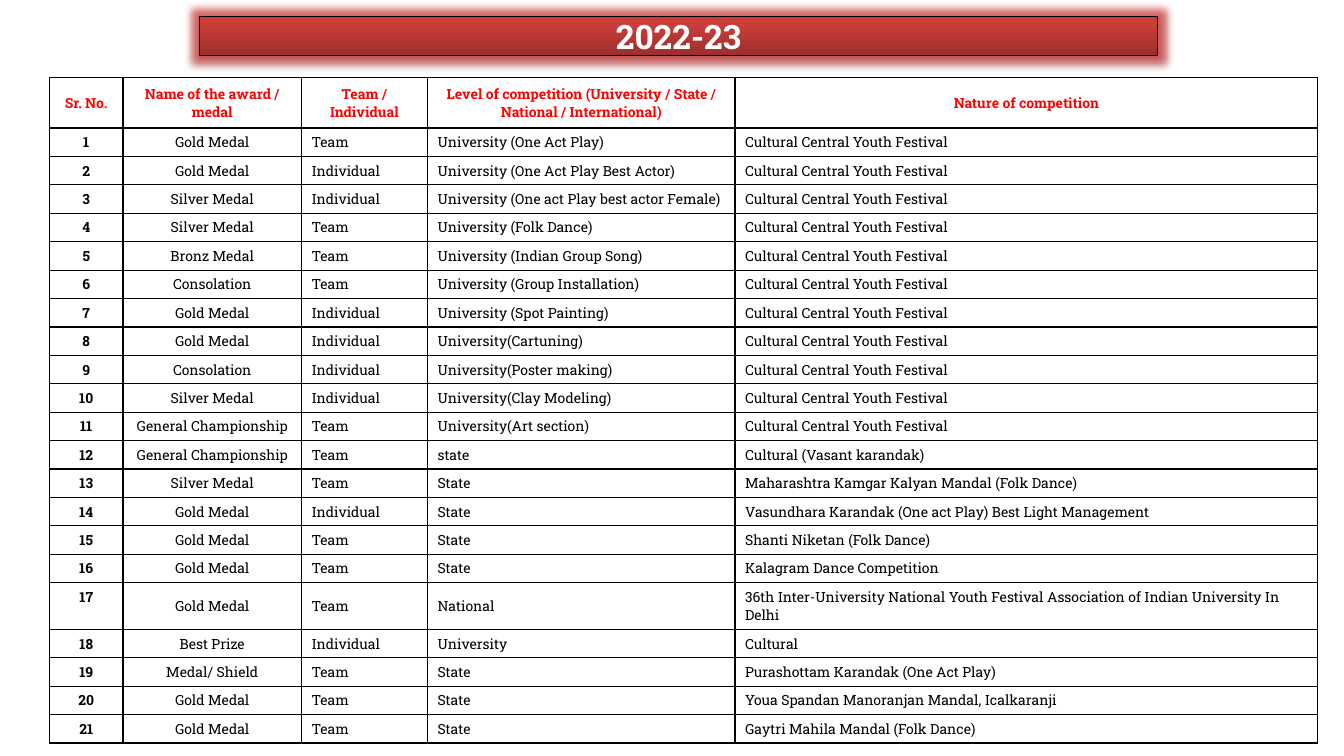
from lxml import etree
from pptx import Presentation
from pptx.dml.color import RGBColor
from pptx.enum.text import MSO_ANCHOR, MSO_AUTO_SIZE, PP_ALIGN
from pptx.oxml import parse_xml
from pptx.oxml.ns import nsdecls, qn
from pptx.util import Inches, Pt

FONT = "Roboto Slab"
COLORS = {
    "black": "000000", "white": "FFFFFF", "header": "FF0000", "glow": "D62020",
    "dark": "9C2F2D", "mid": "CB3E3A", "light": "CE3B37",
}
COLUMN_WIDTHS = [0.73, 1.77, 1.25, 3.05, 5.78]
HEADER_HEIGHT, ROW_HEIGHT, TALL_HEIGHT = 0.5, 0.28, 0.41
TALL_ROW = 17
HEADERS = [
    "Sr. No.", "Name of the award / medal", "Team / Individual",
    "Level of competition (University / State / National / International)",
    "Nature of competition",
]
FESTIVAL = "Cultural Central Youth Festival"
AWARDS = [
    ("Gold Medal", "Team", "University (One Act Play)", FESTIVAL),
    ("Gold Medal", "Individual", "University (One Act Play Best Actor)", FESTIVAL),
    ("Silver Medal", "Individual", "University (One act Play best actor Female)", FESTIVAL),
    ("Silver Medal", "Team", "University (Folk Dance)", FESTIVAL),
    ("Bronz Medal", "Team", "University (Indian Group Song)", FESTIVAL),
    ("Consolation", "Team", "University (Group Installation)", FESTIVAL),
    ("Gold Medal", "Individual", "University (Spot Painting)", FESTIVAL),
    ("Gold Medal", "Individual", "University(Cartuning)", FESTIVAL),
    ("Consolation", "Individual", "University(Poster making)", FESTIVAL),
    ("Silver Medal", "Individual", "University(Clay Modeling)", FESTIVAL),
    ("General Championship", "Team", "University(Art section)", FESTIVAL),
    ("General Championship", "Team", "state", "Cultural (Vasant karandak)"),
    ("Silver Medal", "Team", "State", "Maharashtra Kamgar Kalyan Mandal (Folk Dance)"),
    ("Gold Medal", "Individual", "State",
     "Vasundhara Karandak (One act Play) Best Light Management"),
    ("Gold Medal", "Team", "State", "Shanti Niketan (Folk Dance)"),
    ("Gold Medal", "Team", "State", "Kalagram Dance Competition"),
    ("Gold Medal", "Team", "National",
     "36th Inter-University National Youth Festival Association of Indian University In Delhi"),
    ("Best Prize", "Individual", "University", "Cultural"),
    ("Medal/ Shield", "Team", "State", "Purashottam Karandak (One Act Play)"),
    ("Gold Medal", "Team", "State", "Youa Spandan Manoranjan Mandal, Icalkaranji"),
    ("Gold Medal", "Team", "State", "Gaytri Mahila Mandal (Folk Dance)"),
]


def write_text(tf, text, size, color, bold, align):
    p = tf.paragraphs[0]
    p.alignment = align
    r = p.add_run()
    r.text = text
    for name, value in {"name": FONT, "size": Pt(size), "bold": bold}.items():
        setattr(r.font, name, value)
    r.font.color.rgb = RGBColor.from_string(COLORS[color])


def add_borders(cell):
    tc_pr = cell._tc.get_or_add_tcPr()
    for side in ("lnL", "lnR", "lnT", "lnB"):
        ln = etree.SubElement(tc_pr, qn(f"a:{side}"), w=str(Pt(1)))
        fill = etree.SubElement(ln, qn("a:solidFill"))
        etree.SubElement(fill, qn("a:srgbClr"), val=COLORS["black"])


def add_award_table(slide):
    rows = [HEADERS] + [(str(n), *award) for n, award in enumerate(AWARDS, 1)]
    heights = [HEADER_HEIGHT] + [ROW_HEIGHT] * len(AWARDS)
    heights[TALL_ROW] = TALL_HEIGHT
    table = slide.shapes.add_table(
        len(rows), len(HEADERS), Inches(0.49), Inches(0.77),
        Inches(sum(COLUMN_WIDTHS)), Inches(sum(heights))).table
    table.first_row = table.horz_banding = False
    for column, width in zip(table.columns, COLUMN_WIDTHS):
        column.width = Inches(width)
    for i, (values, height) in enumerate(zip(rows, heights)):
        table.rows[i].height = Inches(height)
        for j, text in enumerate(values):
            cell = table.cell(i, j)
            add_borders(cell)
            cell.fill.background()
            top = (i, j) == (TALL_ROW, 0)
            cell.vertical_anchor = MSO_ANCHOR.TOP if top else MSO_ANCHOR.MIDDLE
            centred = i == 0 or j < 2
            write_text(cell.text_frame, text, 10, "header" if i == 0 else "black",
                       i == 0 or j == 0, PP_ALIGN.CENTER if centred else PP_ALIGN.LEFT)


def add_gradient(sp):
    stops = "".join(
        f'<a:gs pos="{pos * 1000}"><a:srgbClr val="{COLORS[color]}"/></a:gs>'
        for pos, color in ((0, "dark"), (80, "mid"), (100, "light")))
    ln = sp.line._get_or_add_ln()
    ln.addprevious(parse_xml(
        f'<a:gradFill {nsdecls("a")} rotWithShape="1"><a:gsLst>{stops}</a:gsLst>'
        '<a:lin ang="16200000" scaled="0"/></a:gradFill>'))


def add_glow_and_shadow(sp):
    sp._element.spPr.append(parse_xml(
        f'<a:effectLst {nsdecls("a")}>'
        f'<a:glow rad="{Inches(0.15)}"><a:srgbClr val="{COLORS["glow"]}">'
        '<a:alpha val="60000"/></a:srgbClr></a:glow>'
        f'<a:outerShdw blurRad="{Pt(3.1)}" dist="{Pt(1.8)}" dir="5400000" rotWithShape="0">'
        f'<a:srgbClr val="{COLORS["black"]}"><a:alpha val="35000"/></a:srgbClr>'
        '</a:outerShdw></a:effectLst>'))


def format_title(sp, text):
    box = {"left": 1.98, "top": 0.16, "width": 9.5, "height": 0.39}
    for name, value in box.items():
        setattr(sp, name, Inches(value))
    sp.line.color.rgb = RGBColor.from_string(COLORS["black"])
    sp.line.width = Pt(0.75)
    add_gradient(sp)
    add_glow_and_shadow(sp)
    tf = sp.text_frame
    frame = {"margin_top": 0, "margin_bottom": 0, "word_wrap": True,
             "auto_size": MSO_AUTO_SIZE.NONE, "vertical_anchor": MSO_ANCHOR.MIDDLE}
    for name, value in frame.items():
        setattr(tf, name, value)
    write_text(tf, text, 24, "white", True, PP_ALIGN.CENTER)


def main():
    prs = Presentation()
    prs.slide_width, prs.slide_height = Inches(13.33), Inches(7.5)
    slide = prs.slides.add_slide(prs.slide_layouts[5])
    add_award_table(slide)
    format_title(slide.shapes.title, "2022-23")
    prs.save("out.pptx")


if __name__ == "__main__":
    main()
